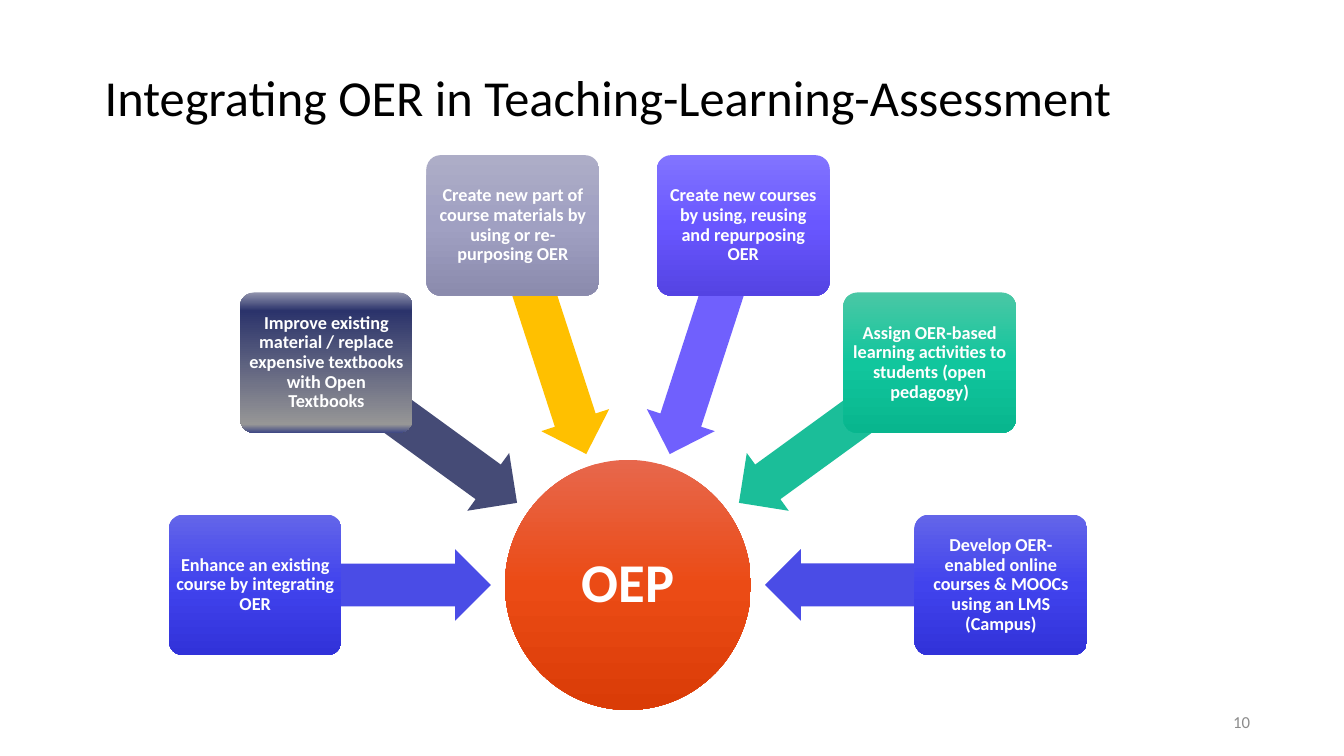
import math
from dataclasses import dataclass

from lxml import etree
from pptx import Presentation
from pptx.dml.color import RGBColor
from pptx.enum import shapes, text
from pptx.oxml import ns
from pptx.shapes.autoshape import Shape
from pptx.slide import Slide
from pptx.util import Pt

FONT = "Calibri"
BLACK = RGBColor(0x00, 0x00, 0x00)
WHITE = RGBColor(0xFF, 0xFF, 0xFF)
GREY = RGBColor(0x8C, 0x8C, 0x8C)
BLUE = RGBColor(0x4A, 0x4C, 0xE6)
NAVY = RGBColor(0x45, 0x4B, 0x76)
GOLD = RGBColor(0xFF, 0xC0, 0x00)
VIOLET = RGBColor(0x70, 0x60, 0xFD)
GREEN = RGBColor(0x1B, 0xBE, 0x99)

Gradient = list[tuple[int, RGBColor]]


def three_stops(top: RGBColor, middle: RGBColor, bottom: RGBColor) -> Gradient:
    return [(0, top), (50, middle), (100, bottom)]


ORANGE_FADE = three_stops(RGBColor(0xE7, 0x67, 0x4C), RGBColor(0xEB, 0x4B, 0x15), RGBColor(0xDA, 0x3C, 0x07))
BLUE_FADE = three_stops(RGBColor(0x63, 0x65, 0xE9), RGBColor(0x41, 0x43, 0xED), RGBColor(0x31, 0x32, 0xD9))
LILAC_FADE = three_stops(RGBColor(0xAD, 0xAD, 0xC7), RGBColor(0xA0, 0xA0, 0xC2), RGBColor(0x8B, 0x8B, 0xAD))
VIOLET_FADE = three_stops(RGBColor(0x82, 0x74, 0xFF), RGBColor(0x69, 0x57, 0xFF), RGBColor(0x54, 0x43, 0xE3))
GREEN_FADE = three_stops(RGBColor(0x4A, 0xC7, 0xA5), RGBColor(0x11, 0xC6, 0x9D), RGBColor(0x08, 0xB6, 0x8E))
NAVY_FADE = [
    (0, RGBColor(0x91, 0x94, 0xAD)),
    (13, RGBColor(0x2B, 0x33, 0x6B)),
    (94, RGBColor(0x96, 0x96, 0x96)),
    (100, RGBColor(0x3D, 0x46, 0x84)),
]

CENTRE_X, CENTRE_Y = 448.6, 417.8
HUB_WIDTH, HUB_HEIGHT = 175.7, 178.6
BOX_WIDTH, BOX_HEIGHT = 123.3, 100.3
BOX_ORBIT = (266.3, 270)
ARROW_ORBIT = (182.2, 184)
ARROW_HEIGHT = 51
ANGLE_STEP = 36


@dataclass
class Practice:
    label: str
    fade: Gradient
    arrow_color: RGBColor
    arrow_length: float = 168.5


PRACTICES = [
    Practice("Enhance an existing course by integrating OER", BLUE_FADE, BLUE),
    Practice("Improve existing material / replace expensive textbooks with Open Textbooks", NAVY_FADE, NAVY),
    Practice("Create new part of course materials by using or re-purposing OER", LILAC_FADE, GOLD, 171.4),
    Practice("Create new courses by using, reusing and repurposing OER", VIOLET_FADE, VIOLET, 171.4),
    Practice("Assign OER-based learning activities to students (open pedagogy)", GREEN_FADE, GREEN),
    Practice("Develop OER-enabled online courses & MOOCs using an LMS (Campus)", BLUE_FADE, BLUE),
]


def write(shape: Shape, content: str, size: float, color: RGBColor, align: text.PP_ALIGN,
          bold: bool = False, spacing: float = 0.9) -> None:
    frame = shape.text_frame
    frame.word_wrap = True
    frame.vertical_anchor = text.MSO_ANCHOR.MIDDLE
    paragraph = frame.paragraphs[0]
    paragraph.alignment = align
    paragraph.line_spacing = spacing
    run = paragraph.add_run()
    run.text = content
    run.font.name = FONT
    run.font.size = Pt(size)
    run.font.bold = bold
    run.font.color.rgb = color


def add_centred_shape(slide: Slide, kind: shapes.MSO_SHAPE, x: float, y: float,
                      width: float, height: float) -> Shape:
    """Add a plain shape whose middle lies at x, y."""
    shape = slide.shapes.add_shape(kind, Pt(x - width / 2), Pt(y - height / 2), Pt(width), Pt(height))
    shape.shadow.inherit = False
    shape.line.fill.background()
    return shape


def fill_downwards(shape: Shape, fade: Gradient) -> None:
    """Fill with a top-to-bottom gradient of any number of stops."""
    shape.fill.gradient()
    shape.fill.gradient_angle = 270
    stops = shape.element.spPr.find(ns.qn("a:gradFill")).find(ns.qn("a:gsLst"))
    for stop in list(stops):
        stops.remove(stop)
    for percent, color in fade:
        stop = etree.SubElement(stops, ns.qn("a:gs"), pos=str(percent * 1000))
        etree.SubElement(stop, ns.qn("a:srgbClr"), val=str(color))


def add_label(shape: Shape, content: str, size: float) -> None:
    frame = shape.text_frame
    frame.margin_left = frame.margin_right = Pt(2.2)
    frame.margin_top = frame.margin_bottom = Pt(2.2)
    write(shape, content, size, WHITE, text.PP_ALIGN.CENTER, bold=True)


def on_orbit(orbit: tuple[float, float], degrees: float) -> tuple[float, float]:
    angle = math.radians(degrees)
    return CENTRE_X + orbit[0] * math.cos(angle), CENTRE_Y + orbit[1] * math.sin(angle)


def add_practice(slide: Slide, practice: Practice, degrees: float) -> None:
    """Add an arrow towards the hub and the labelled box at its tail."""
    arrow = add_centred_shape(slide, shapes.MSO_SHAPE.LEFT_ARROW, *on_orbit(ARROW_ORBIT, degrees),
                              practice.arrow_length, ARROW_HEIGHT)
    arrow.adjustments[0] = 0.6
    arrow.adjustments[1] = 0.5
    arrow.rotation = degrees % 360
    arrow.fill.solid()
    arrow.fill.fore_color.rgb = practice.arrow_color

    box = add_centred_shape(slide, shapes.MSO_SHAPE.ROUNDED_RECTANGLE, *on_orbit(BOX_ORBIT, degrees),
                            BOX_WIDTH, BOX_HEIGHT)
    box.adjustments[0] = 0.1
    fill_downwards(box, practice.fade)
    add_label(box, practice.label, 13)


def main() -> None:
    presentation = Presentation()
    presentation.slide_width = Pt(960)
    presentation.slide_height = Pt(540)
    slide = presentation.slides.add_slide(presentation.slide_layouts[6])

    title = slide.shapes.add_textbox(Pt(67.7), Pt(31.7), Pt(870.5), Pt(79.2))
    write(title, "Integrating OER in Teaching-Learning-Assessment", 36, BLACK, text.PP_ALIGN.LEFT)
    page_number = slide.shapes.add_textbox(Pt(678.2), Pt(501.8), Pt(221.8), Pt(27.4))
    write(page_number, "10", 12, GREY, text.PP_ALIGN.RIGHT, spacing=1.0)

    hub = add_centred_shape(slide, shapes.MSO_SHAPE.OVAL, CENTRE_X, CENTRE_Y, HUB_WIDTH, HUB_HEIGHT)
    fill_downwards(hub, ORANGE_FADE)
    add_label(hub, "OEP", 39)

    for index, practice in enumerate(PRACTICES):
        add_practice(slide, practice, 180 + index * ANGLE_STEP)

    presentation.save("out.pptx")


if __name__ == "__main__":
    main()
